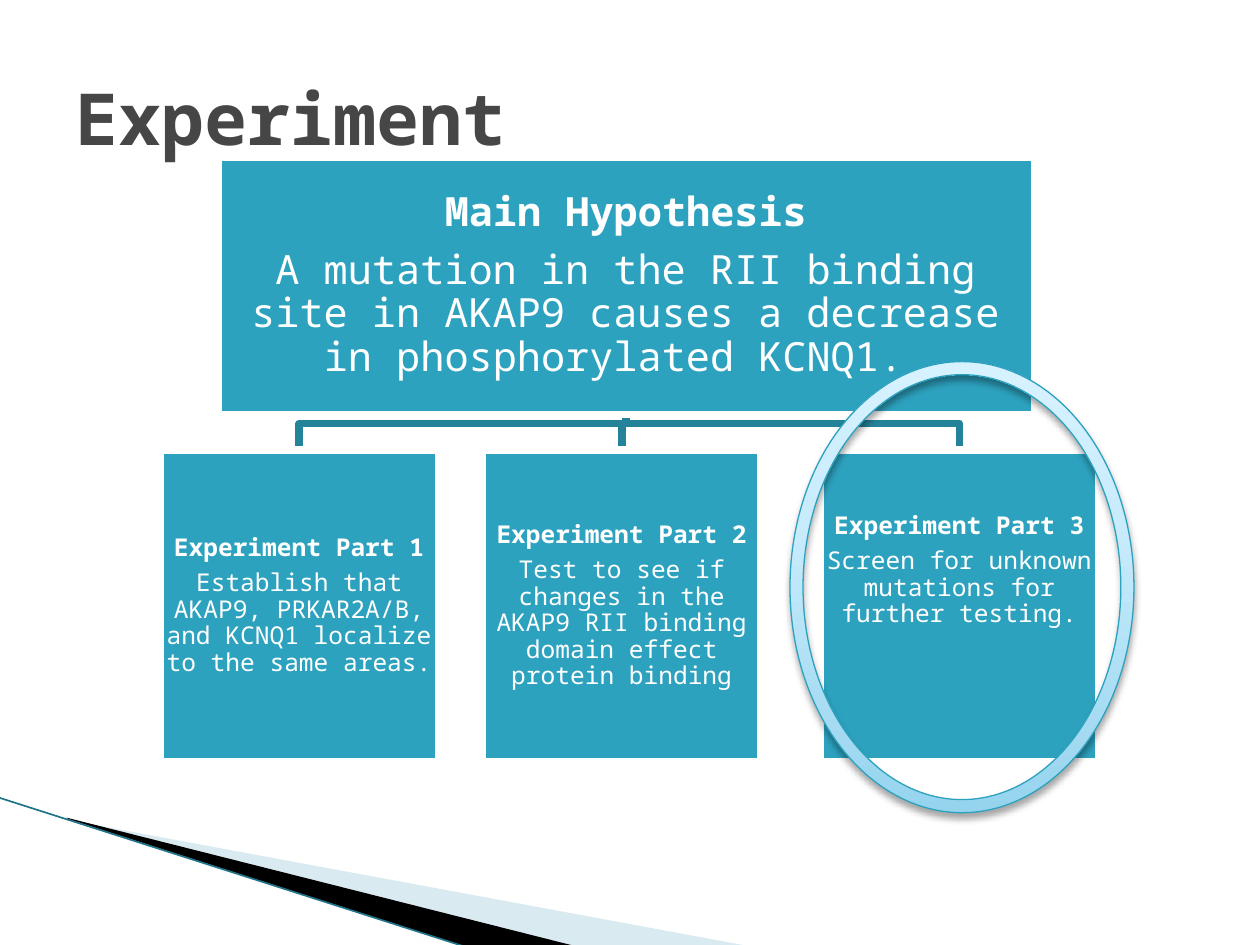
from lxml.etree import SubElement
from pptx import Presentation
from pptx.dml.color import RGBColor
from pptx.enum.shapes import MSO_CONNECTOR, MSO_SHAPE
from pptx.enum.text import MSO_ANCHOR, PP_ALIGN
from pptx.oxml import parse_xml
from pptx.oxml.ns import nsdecls, qn
from pptx.util import Inches, Pt

COLORS = {"teal": "2DA2BF", "branch": "248299", "edge": "1F7488", "pale": "A0CBDC",
          "black": "000000", "white": "FFFFFF", "title": "464646"}
FONT = "Noto Sans Mono"
TITLE = "Experiment"
MAIN = ("Main Hypothesis",
        "A mutation in the RII binding site in AKAP9 causes a decrease "
        "in phosphorylated KCNQ1. ")
PARTS = [
    (1.27, "Establish that AKAP9, PRKAR2A/B, and KCNQ1 localize to the same areas.", 0.01),
    (3.83, "Test to see if changes in the AKAP9 RII binding domain effect protein binding", 0.01),
    (6.51, "Screen for unknown mutations for further testing.", 0.57),
]
WEDGES = [
    ("pale", 40, [(0.55, 6.51), (5.95, 7.51), (4.56, 7.51), (0.55, 6.5)]),
    ("black", 100, [(0.53, 6.49), (4.57, 7.51), (3.72, 7.52), (0.54, 6.5)]),
]
RING = [(0, "96D4EE"), (65, "C9ECFC"), (100, "D7F2FF")]
MAIN_BOX = (1.73, 1.25, 6.48, 2.04)
PART_TOP, PART_W, PART_H = 3.57, 2.21, 2.48
STEM, BAR = 4.97, 3.36
RULE = 4.33

prs = Presentation()
prs.slide_width, prs.slide_height = Inches(10), Inches(7.5)
slide = prs.slides.add_slide(prs.slide_layouts[6])
shapes = slide.shapes


def color(name):
    return RGBColor.from_string(COLORS[name])


def stroke(shape, name, width):
    shape.line.color.rgb = color(name)
    shape.line.width = Pt(width)


def write(shape, *lines, size, tint="white", align=PP_ALIGN.CENTER, space=0.9,
          inset=None, foot=None):
    """Fill a shape with a bold first line and plain lines after it."""
    frame = shape.text_frame
    frame.word_wrap = True
    frame.vertical_anchor = MSO_ANCHOR.MIDDLE
    if inset is not None:
        frame.margin_left = frame.margin_right = frame.margin_top = Inches(inset)
        frame.margin_bottom = Inches(inset if foot is None else foot)
    for i, line in enumerate(lines):
        para = frame.add_paragraph() if i else frame.paragraphs[0]
        para.alignment, para.line_spacing = align, space
        if len(lines) > 1:
            para.space_after = Pt(round(size * 0.35, 1))
        run = para.add_run()
        run.text = line
        run.font.name, run.font.size = FONT, Pt(size)
        run.font.bold = i == 0
        run.font.color.rgb = color(tint)


def trace(points, close):
    spots = [(Inches(x), Inches(y)) for x, y in points]
    path = shapes.build_freeform(*spots[0], scale=1.0)
    path.add_line_segments(spots[1:], close=close)
    shape = path.convert_to_shape()
    shape.shadow.inherit = False
    return shape


def add_box(*place):
    box = shapes.add_shape(MSO_SHAPE.RECTANGLE, *map(Inches, place))
    box.shadow.inherit = False
    box.fill.solid()
    box.fill.fore_color.rgb = color("teal")
    stroke(box, "white", RULE)
    return box


def add_ring(*place):
    ring = shapes.add_shape(MSO_SHAPE.DONUT, *map(Inches, place))
    ring.adjustments[0] = 0.038
    stops = "".join(f'<a:gs pos="{pos * 1000}"><a:srgbClr val="{tone}"/></a:gs>'
                    for pos, tone in RING)
    props = ring._element.spPr
    props.find(qn("a:prstGeom")).addnext(parse_xml(
        f'<a:gradFill {nsdecls("a")} rotWithShape="1"><a:gsLst>{stops}</a:gsLst>'
        '<a:lin ang="16200000" scaled="0"/></a:gradFill>'))
    stroke(ring, "teal", 0.75)
    props.append(parse_xml(
        f'<a:effectLst {nsdecls("a")}><a:outerShdw blurRad="{Pt(4)}" dist="{Pt(3)}" '
        'dir="5400000" rotWithShape="0"><a:srgbClr val="000000"><a:alpha val="35000"/>'
        '</a:srgbClr></a:outerShdw></a:effectLst>'))


for name, alpha, points in WEDGES:
    wedge = trace(points, True)
    wedge.fill.solid()
    wedge.fill.fore_color.rgb = color(name)
    wedge.line.fill.background()
    tone = wedge._element.spPr.find(qn("a:solidFill"))[0]
    SubElement(tone, qn("a:alpha"), val=str(alpha * 1000))

edge = shapes.add_connector(MSO_CONNECTOR.STRAIGHT, Inches(-0.01), Inches(6.33),
                            Inches(3.71), Inches(7.52))
stroke(edge, "edge", 0.95)
SubElement(edge._element.spPr, qn("a:effectLst"))

start = MAIN_BOX[1] + MAIN_BOX[3]
for left, _, _ in reversed(PARTS):
    mid = left + PART_W / 2
    branch = trace([(STEM, start), (STEM, BAR), (mid, BAR), (mid, PART_TOP)], False)
    branch.fill.background()
    stroke(branch, "branch", RULE)

write(add_box(*MAIN_BOX), *MAIN, size=23, inset=0.02)
for num, (left, text, foot) in enumerate(PARTS, 1):
    write(add_box(left, PART_TOP, PART_W, PART_H), f"Experiment Part {num}", text,
          size=14, inset=0.01, foot=foot)

title = shapes.add_textbox(Inches(0.5), Inches(0.3), Inches(9), Inches(1.25))
write(title, TITLE, size=41, tint="title", align=PP_ALIGN.LEFT, space=1.0)
add_ring(6.27, 2.87, 2.73, 3.58)

prs.save("out.pptx")
